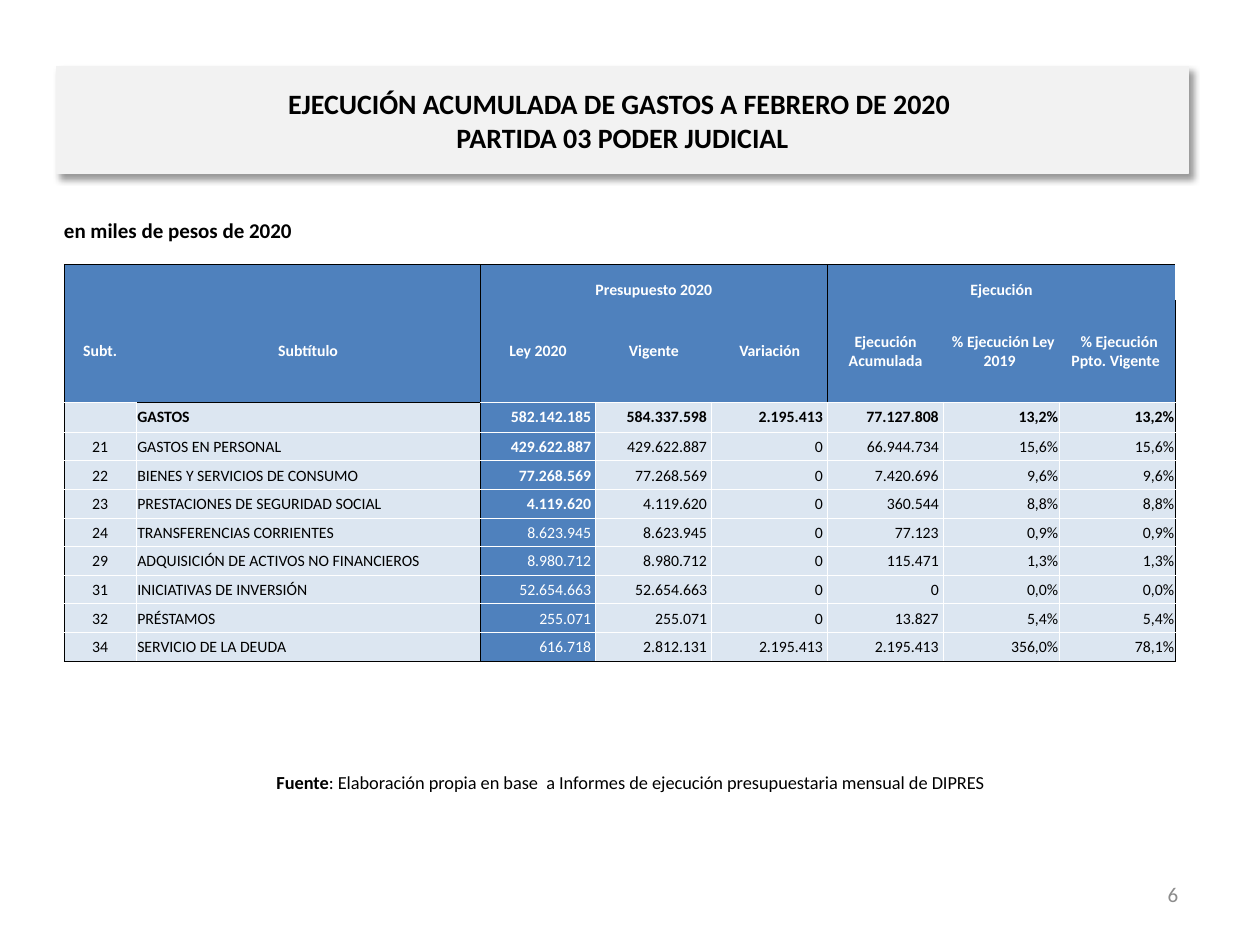
from lxml import etree
from pptx import Presentation
from pptx.dml.color import RGBColor
from pptx.enum.shapes import MSO_SHAPE
from pptx.enum.text import MSO_ANCHOR, PP_ALIGN
from pptx.oxml import parse_xml
from pptx.oxml.ns import qn
from pptx.util import Inches, Pt

LEFT, CENTER, RIGHT, JUSTIFY = PP_ALIGN.LEFT, PP_ALIGN.CENTER, PP_ALIGN.RIGHT, PP_ALIGN.JUSTIFY
TOP, MIDDLE, BOTTOM = MSO_ANCHOR.TOP, MSO_ANCHOR.MIDDLE, MSO_ANCHOR.BOTTOM
RECT = MSO_SHAPE.RECTANGLE
NS = "http://schemas.openxmlformats.org/drawingml/2006/main"
FONT, BLACK, WHITE, BLUE, PALE = "Calibri", "000000", "FFFFFF", "4F81BD", "DCE6F1"
GRAY, PANEL = "8C8C8C", "F2F2F2"

TITLE = "EJECUCIÓN ACUMULADA DE GASTOS A FEBRERO DE 2020 \vPARTIDA 03 PODER JUDICIAL"
NOTES = [
    ((0.41, 6.01, 9.19, 0.4), MIDDLE, CENTER, 10.5, BLACK,
     [("Fuente", True),
      (": Elaboración propia en base  a Informes de ejecución presupuestaria mensual de DIPRES", False)]),
    ((7.12, 6.9, 2.33, 0.4), MIDDLE, RIGHT, 12, GRAY, [("6", False)]),
    ((0.41, 1.68, 9, 0.5), TOP, LEFT, 12, BLACK, [("en miles de pesos de 2020", True)]),
]
GROUPS = ["", "", "Presupuesto 2020", "", "", "Ejecución", "", ""]
HEADINGS = ["Subt.", "Subtítulo", "Ley 2020", "Vigente", "Variación", "Ejecución Acumulada",
            " % Ejecución Ley 2019 ", " % Ejecución Ppto. Vigente "]
BODY = [
    ("", "GASTOS", "582.142.185", "584.337.598", "2.195.413", "77.127.808", "13,2%", "13,2%"),
    ("21", "GASTOS EN PERSONAL", "429.622.887", "429.622.887", "0", "66.944.734", "15,6%", "15,6%"),
    ("22", "BIENES Y SERVICIOS DE CONSUMO", "77.268.569", "77.268.569", "0", "7.420.696", "9,6%", "9,6%"),
    ("23", "PRESTACIONES DE SEGURIDAD SOCIAL", "4.119.620", "4.119.620", "0", "360.544", "8,8%", "8,8%"),
    ("24", "TRANSFERENCIAS CORRIENTES", "8.623.945", "8.623.945", "0", "77.123", "0,9%", "0,9%"),
    ("29", "ADQUISICIÓN DE ACTIVOS NO FINANCIEROS", "8.980.712", "8.980.712", "0", "115.471", "1,3%", "1,3%"),
    ("31", "INICIATIVAS DE INVERSIÓN", "52.654.663", "52.654.663", "0", "0", "0,0%", "0,0%"),
    ("32", "PRÉSTAMOS", "255.071", "255.071", "0", "13.827", "5,4%", "5,4%"),
    ("34", "SERVICIO DE LA DEUDA", "616.718", "2.812.131", "2.195.413", "2.195.413", "356,0%", "78,1%"),
]
ROWS = [GROUPS, HEADINGS, *BODY]
HEAD, TOTAL, LAW, DONE = 2, 2, 2, 5
BOLD_LAW_ROWS = 4
COL_WIDTHS = [0.57, 2.73] + [0.92] * 6
ROW_HEIGHTS = [0.28, 0.81, 0.24] + [1.82 / 8] * 8


def rgb(value):
    """Turn a hex string into a colour."""
    return RGBColor.from_string(value)


def write(p, runs, size, color, align):
    """Fill a paragraph with (text, bold) runs."""
    p.alignment = align
    for text, bold in runs:
        r = p.add_run()
        r.text = text
        for name, value in {"name": FONT, "size": Pt(size), "bold": bold}.items():
            setattr(r.font, name, value)
        r.font.color.rgb = rgb(color)


def vertical_edge(row, x):
    """Colour of the table's vertical edge x, or None."""
    if x in (0, LAW, len(COL_WIDTHS)) or (row < HEAD and x == DONE):
        return BLACK
    return None if row < HEAD else WHITE


def horizontal_edge(y, col):
    """Colour of the table's horizontal edge y, or None."""
    if y in (0, len(ROWS)) or (y == HEAD and col == 1):
        return BLACK
    return None if y < HEAD else WHITE


def set_borders(cell, row, col):
    """Draw the four edges of a cell."""
    edges = {"lnL": vertical_edge(row, col), "lnR": vertical_edge(row, col + 1),
             "lnT": horizontal_edge(row, col), "lnB": horizontal_edge(row + 1, col)}
    for i, (tag, color) in enumerate(edges.items()):
        paint = f'<a:solidFill><a:srgbClr val="{color}"/></a:solidFill>' if color else "<a:noFill/>"
        cell._tc.get_or_add_tcPr().insert(
            i, parse_xml(f'<a:{tag} xmlns:a="{NS}" w="6350">{paint}</a:{tag}>'))


def cell_format(row, col):
    """Return the alignment, bold, text colour and fill of a cell."""
    if row < HEAD:
        return CENTER, True, WHITE, BLUE
    total = row == TOTAL
    if col < LAW:
        return (CENTER, LEFT if total else JUSTIFY)[col], total, BLACK, PALE
    if col == LAW:
        return RIGHT, row < TOTAL + BOLD_LAW_ROWS, WHITE, BLUE
    return RIGHT, total, BLACK, PALE


def fill_cell(cell, row, col, text):
    """Write and format one table cell."""
    align, bold, color, fill = cell_format(row, col)
    if row >= HEAD and LAW <= col <= DONE:
        text += " "
    margins = {"margin_left": 0.01, "margin_top": 0.01, "margin_right": 0.01, "margin_bottom": 0}
    for name, value in margins.items():
        setattr(cell, name, Inches(value))
    cell.vertical_anchor = MIDDLE if row else BOTTOM
    cell.fill.solid()
    cell.fill.fore_color.rgb = rgb(fill)
    p = cell.text_frame.paragraphs[0]
    if text:
        write(p, [(text, bold)], 9, color, align)
    else:
        etree.SubElement(p._p, qn("a:endParaRPr"), sz="900")
    set_borders(cell, row, col)


def add_title(s):
    """Add the shaded title panel."""
    sp = s.shapes.add_shape(RECT, *map(Inches, (0.45, 0.53, 8.98, 0.85)))
    sp.fill.solid()
    sp.fill.fore_color.rgb = sp.line.color.rgb = rgb(PANEL)
    sp.line.width = Pt(0.75)
    sp._element.spPr.append(parse_xml(
        f'<a:effectLst xmlns:a="{NS}"><a:outerShdw blurRad="{Pt(4)}" dist="{Pt(3)}" dir="2700000" '
        f'algn="tl" rotWithShape="0"><a:srgbClr val="{BLACK}"><a:alpha val="40000"/></a:srgbClr>'
        '</a:outerShdw></a:effectLst>'))
    tf = sp.text_frame
    tf.word_wrap, tf.vertical_anchor = True, MIDDLE
    first, second = TITLE.split("\v")
    p = tf.paragraphs[0]
    write(p, [(first, True)], 16, BLACK, CENTER)
    p.add_line_break()
    write(p, [(second, True)], 16, BLACK, CENTER)


def add_budget_table(s):
    """Add the budget table."""
    table = s.shapes.add_table(len(ROWS), len(COL_WIDTHS), Inches(0.51), Inches(2.1),
                               Inches(sum(COL_WIDTHS)), Inches(sum(ROW_HEIGHTS))).table
    table.first_row = table.horz_banding = False
    for column, width in zip(table.columns, COL_WIDTHS):
        column.width = Inches(width)
    for row, height in zip(table.rows, ROW_HEIGHTS):
        row.height = Inches(height)
    for i, texts in enumerate(ROWS):
        for j, text in enumerate(texts):
            fill_cell(table.cell(i, j), i, j, text)
    for start in (LAW, DONE):
        table.cell(0, start).merge(table.cell(0, start + 2))


def main():
    """Build the slide and save it."""
    prs = Presentation()
    prs.slide_width, prs.slide_height = Inches(10), Inches(7.5)
    s = prs.slides.add_slide(prs.slide_layouts[6])
    for box, anchor, align, size, color, runs in NOTES:
        tf = s.shapes.add_textbox(*map(Inches, box)).text_frame
        tf.word_wrap, tf.vertical_anchor = True, anchor
        write(tf.paragraphs[0], runs, size, color, align)
    add_title(s)
    add_budget_table(s)
    prs.save("out.pptx")


if __name__ == "__main__":
    main()
